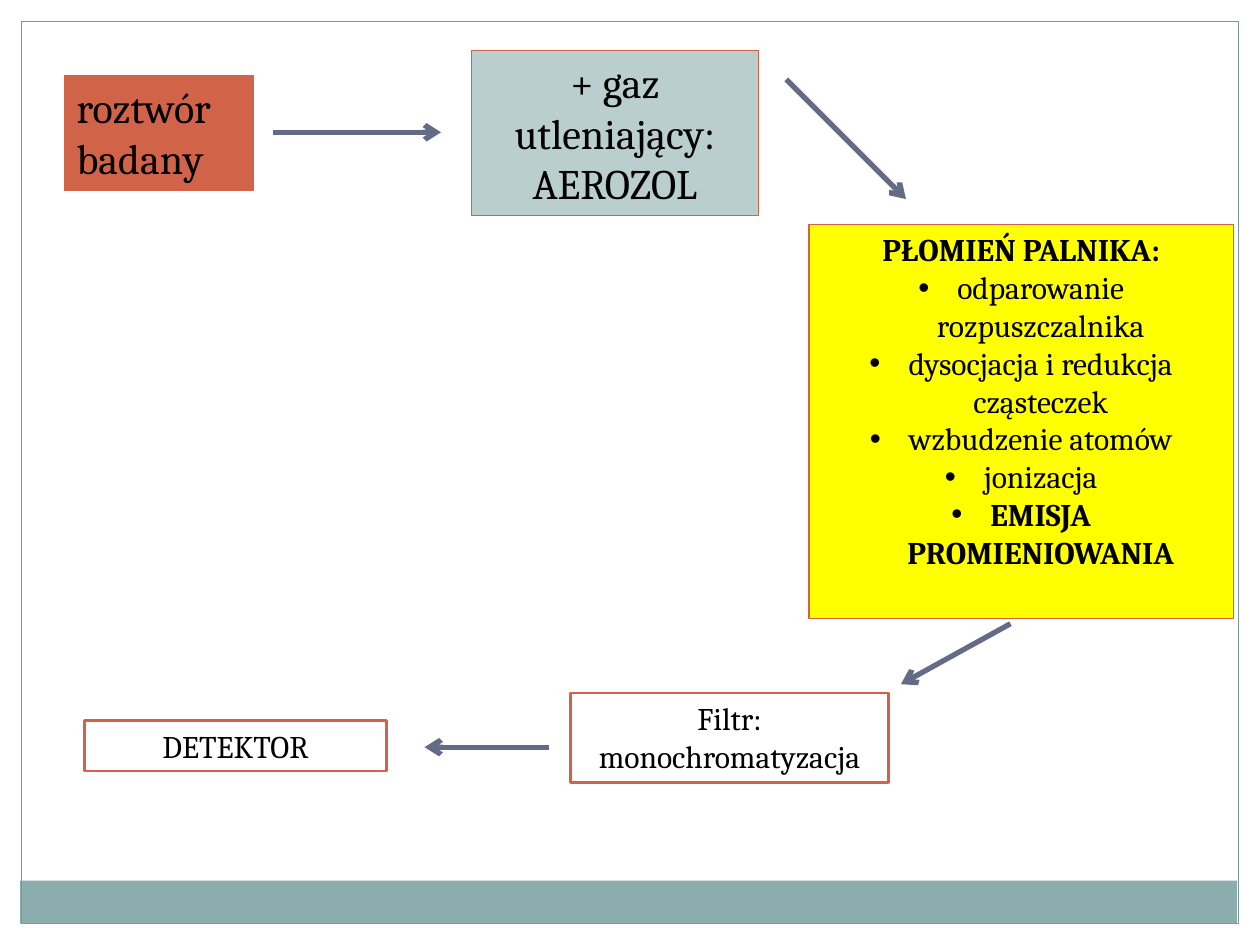
from dataclasses import dataclass
from typing import Optional

from lxml.etree import SubElement
from pptx import Presentation
from pptx.dml.color import RGBColor
from pptx.enum.shapes import MSO_CONNECTOR as Conn, MSO_SHAPE as Shape
from pptx.enum.text import MSO_ANCHOR as Anchor, PP_ALIGN as Align
from pptx.oxml.ns import qn
from pptx.util import Inches, Pt

RUST = RGBColor(0xD1, 0x63, 0x49)
MIST = RGBColor(0xBA, 0xCE, 0xCE)
YELLOW = RGBColor(0xFF, 0xFF, 0x00)
SLATE = RGBColor(0x64, 0x6B, 0x86)
TEAL = RGBColor(0x8C, 0xAD, 0xAE)
FRAME = RGBColor(0x7C, 0x99, 0x9A)
BLACK = RGBColor(0x00, 0x00, 0x00)

# The slide is a grid of 100 columns by 75 rows
COLS, ROWS = 100, 75
WIDTH, HEIGHT = Inches(10), Inches(7.5)
INDENT = Inches(0.31)


@dataclass
class Line:
    text: str
    bold: bool = False
    bullet: bool = False


@dataclass
class Box:
    col: float
    row: float
    cols: float
    rows: float
    fill: Optional[RGBColor] = None
    edge: Optional[RGBColor] = RUST
    weight: float = 0.75
    lines: tuple[Line, ...] = ()
    size: int = 18
    align: Align = Align.CENTER


@dataclass
class Arrow:
    col: float
    row: float
    to_col: float
    to_row: float


def across(col: float) -> int:
    return round(WIDTH * col / COLS)


def down(row: float) -> int:
    return round(HEIGHT * row / ROWS)


def assign(target: object, values: dict) -> None:
    for name, value in values.items():
        setattr(target, name, value)


def add_bullet(para) -> None:
    props = para._p.get_or_add_pPr()
    props.set("marL", str(INDENT))
    props.set("indent", str(-INDENT))
    SubElement(props, qn("a:buFont")).set("typeface", "Arial")
    SubElement(props, qn("a:buChar")).set("char", "•")


def draw_box(slide, box: Box) -> None:
    shape = slide.shapes.add_shape(
        Shape.RECTANGLE, across(box.col), down(box.row), across(box.cols), down(box.rows))
    shape.shadow.inherit = False
    if box.fill is None:
        shape.fill.background()
    else:
        shape.fill.solid()
        shape.fill.fore_color.rgb = box.fill
    if box.edge is None:
        shape.line.fill.background()
    else:
        shape.line.color.rgb = box.edge
        shape.line.width = Pt(box.weight)
    frame = shape.text_frame
    assign(frame, {"word_wrap": True, "vertical_anchor": Anchor.TOP})
    for i, line in enumerate(box.lines):
        para = frame.add_paragraph() if i else frame.paragraphs[0]
        para.alignment = box.align
        if line.bullet:
            add_bullet(para)
        run = para.add_run()
        run.text = line.text
        assign(run.font, {"name": "Cambria", "size": Pt(box.size), "bold": line.bold})
        run.font.color.rgb = BLACK


def draw_arrow(slide, arrow: Arrow) -> None:
    link = slide.shapes.add_connector(
        Conn.STRAIGHT, across(arrow.col), down(arrow.row),
        across(arrow.to_col), down(arrow.to_row))
    link.line.color.rgb = SLATE
    link.line.width = Pt(3)
    SubElement(link.line._get_or_add_ln(), qn("a:tailEnd")).set("type", "arrow")
    SubElement(link._element.spPr, qn("a:effectLst"))


# Footer band and page frame
BACK = (
    Box(1.6, 69.9, 96.6, 3.4, fill=TEAL, edge=None),
    Box(1.7, 1.7, 96.6, 71.6, edge=FRAME),
)

# Stages of the flame measurement
STAGES = (
    Box(5.1, 6, 15, 9.1, RUST, size=24, align=Align.LEFT,
        lines=(Line("roztwór"), Line("badany"))),
    Box(37.4, 4, 22.8, 13.1, MIST, size=24,
        lines=(Line("+ gaz utleniający:"), Line("AEROZOL"))),
    Box(64.2, 17.8, 33.7, 31.3, YELLOW, lines=(
        Line("PŁOMIEŃ PALNIKA:", bold=True),
        Line("odparowanie rozpuszczalnika", bullet=True),
        Line("dysocjacja i redukcja cząsteczek", bullet=True),
        Line("wzbudzenie atomów", bullet=True),
        Line("jonizacja", bullet=True),
        Line("EMISJA PROMIENIOWANIA", bold=True, bullet=True))),
    Box(45.3, 55, 25.2, 7.1, weight=1.5,
        lines=(Line("Filtr:"), Line("monochromatyzacja"))),
    Box(6.7, 57.2, 24, 4, weight=1.5, lines=(Line("DETEKTOR"),)),
)

# Steps from one stage to the next
STEPS = (
    Arrow(21.7, 10.5, 35, 10.5),
    Arrow(62.4, 6.3, 71.9, 15.8),
    Arrow(80.2, 49.5, 71.5, 54.3),
    Arrow(43.6, 59.3, 33.7, 59.3),
)


def main() -> None:
    deck = Presentation()
    assign(deck, {"slide_width": WIDTH, "slide_height": HEIGHT})
    slide = deck.slides.add_slide(deck.slide_layouts[6])
    for box in BACK + STAGES:
        draw_box(slide, box)
    for step in STEPS:
        draw_arrow(slide, step)
    deck.save("out.pptx")


if __name__ == "__main__":
    main()
